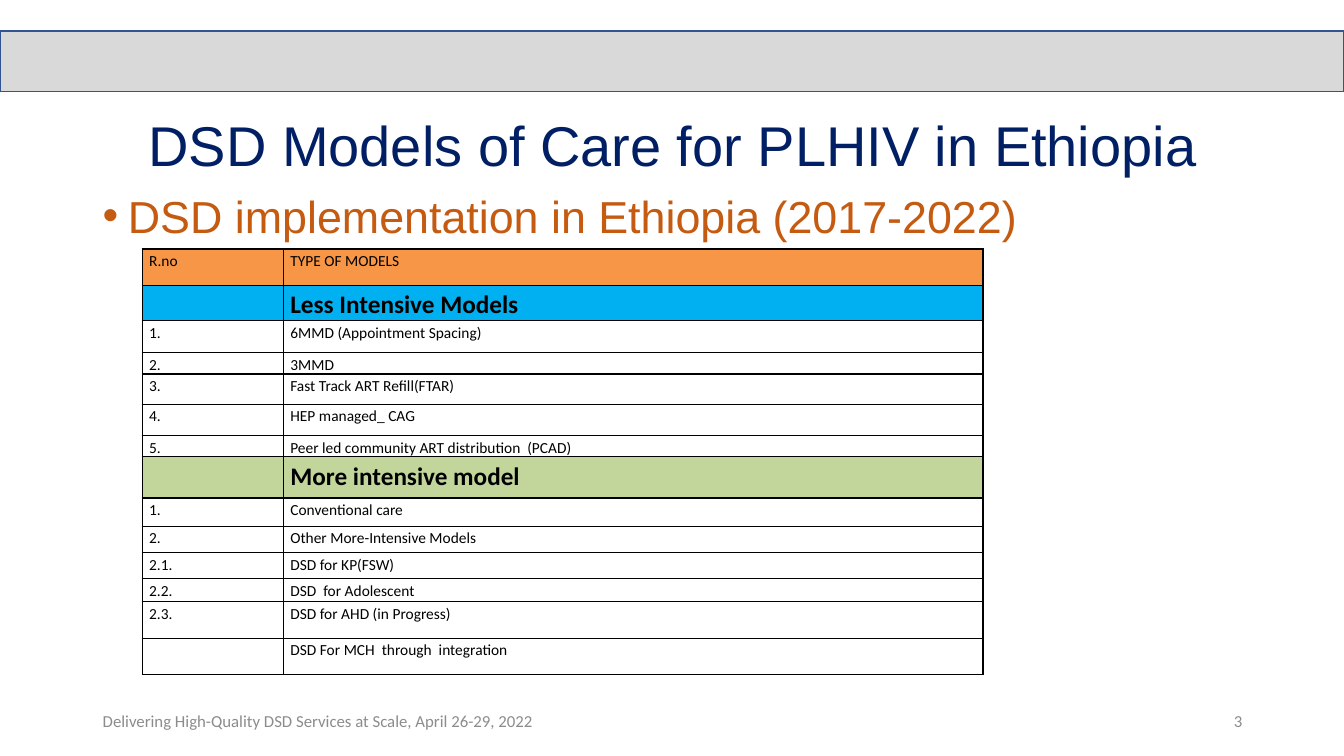
from typing import NamedTuple

import pptx
import pptx.dml.color
import pptx.enum.shapes
import pptx.enum.text
import pptx.oxml
import pptx.oxml.ns
import pptx.util
from lxml import etree

Inches = pptx.util.Inches
Pt = pptx.util.Pt
qn = pptx.oxml.ns.qn
ALIGN = pptx.enum.text.PP_ALIGN
ANCHOR = pptx.enum.text.MSO_ANCHOR

COLORS = {
    "band": "D9D9D9", "band_line": "325491", "title": "001F64", "bullet": "C55A11",
    "footer": "8C8C8C", "text": "000000", "header": "F79646", "less": "00B0F0", "more": "C2D69B",
}


class Row(NamedTuple):
    height: float
    number: str
    model: str
    fill: str = ""
    size: int = 11
    bold: bool = False


ROWS = [
    Row(0.36, "R.no", "TYPE OF MODELS", "header"),
    Row(0.35, "", "Less Intensive Models", "less", 18, True),
    Row(0.32, "1.", "6MMD (Appointment Spacing)"),
    Row(0.21, "2.", "3MMD"),
    Row(0.3, "3.", "Fast Track ART Refill(FTAR)"),
    Row(0.31, "4.", "HEP managed_ CAG"),
    Row(0.21, "5.", "Peer led community ART distribution  (PCAD)"),
    Row(0.41, "", "More intensive model", "more", 18, True),
    Row(0.28, "1.", "Conventional care"),
    Row(0.26, "2.", "Other More-Intensive Models"),
    Row(0.26, "2.1.", "DSD for KP(FSW)"),
    Row(0.23, "2.2.", "DSD  for Adolescent"),
    Row(0.36, "2.3.", "DSD for AHD (in Progress)"),
    Row(0.36, "", "DSD For MCH  through  integration"),
]
COLUMN_WIDTHS = [1.4, 6.94]


def rgb(name: str) -> pptx.dml.color.RGBColor:
    return pptx.dml.color.RGBColor.from_string(COLORS[name])


def write(tf, text: str, *, size: float, color: str = "text", font: str = "Calibri",
          bold: bool = False, align=ALIGN.LEFT, spacing: float = 1.0, bullet: str = "") -> None:
    """Put one formatted paragraph in a text frame."""
    p = tf.paragraphs[0]
    p.alignment = align
    p.line_spacing = spacing
    if bullet:
        p_pr = p._p.get_or_add_pPr()
        p_pr.set("marL", str(Inches(0.25)))
        p_pr.set("indent", str(-Inches(0.25)))
        etree.SubElement(p_pr, qn("a:buFont"), typeface="Arial")
        etree.SubElement(p_pr, qn("a:buChar"), char=bullet)
    if not text:
        etree.SubElement(p._p, qn("a:endParaRPr"), sz=str(size * 100))
        return
    r = p.add_run()
    r.text = text
    r.font.size = Pt(size)
    r.font.name = font
    r.font.bold = bold
    r.font.color.rgb = rgb(color)


def add_text(s, text: str, left: float, top: float, width: float, height: float,
             anchor=ANCHOR.MIDDLE, **text_format) -> None:
    tf = s.shapes.add_textbox(Inches(left), Inches(top), Inches(width), Inches(height)).text_frame
    tf.word_wrap = True
    tf.vertical_anchor = anchor
    write(tf, text, **text_format)


def add_borders(cell) -> None:
    tc_pr = cell._tc.get_or_add_tcPr()
    for i, side in enumerate(("lnL", "lnR", "lnT", "lnB")):
        ln = etree.Element(qn(f"a:{side}"), w=str(Pt(1)))
        fill = etree.SubElement(ln, qn("a:solidFill"))
        etree.SubElement(fill, qn("a:srgbClr"), val=COLORS["text"])
        tc_pr.insert(i, ln)


def add_models_table(s, left: float, top: float) -> None:
    height = sum(row.height for row in ROWS)
    table = s.shapes.add_table(len(ROWS), len(COLUMN_WIDTHS), Inches(left), Inches(top),
                               Inches(sum(COLUMN_WIDTHS)), Inches(height)).table
    table.first_row = False
    table.horz_banding = False
    for column, width in zip(table.columns, COLUMN_WIDTHS):
        column.width = Inches(width)
    for i, row in enumerate(ROWS):
        table.rows[i].height = Inches(row.height)
        for j, text in enumerate((row.number, row.model)):
            cell = table.cell(i, j)
            cell.margin_left = cell.margin_right = Inches(0.07)
            cell.margin_top = cell.margin_bottom = 0
            if row.fill:
                cell.fill.solid()
                cell.fill.fore_color.rgb = rgb(row.fill)
            else:
                cell.fill.background()
            write(cell.text_frame, text, size=row.size, bold=row.bold, spacing=1.15)
            add_borders(cell)


def main() -> None:
    prs = pptx.Presentation()
    prs.slide_width = Inches(13.33)
    prs.slide_height = Inches(7.5)
    s = prs.slides.add_slide(prs.slide_layouts[6])

    # Grey band across the top
    sp = s.shapes.add_shape(pptx.enum.shapes.MSO_SHAPE.RECTANGLE,
                            0, Inches(0.31), prs.slide_width, Inches(0.6))
    sp.shadow.inherit = False
    sp.fill.solid()
    sp.fill.fore_color.rgb = rgb("band")
    sp.line.color.rgb = rgb("band_line")
    sp.line.width = Pt(1)

    # Footer and slide number
    add_text(s, "Delivering High-Quality DSD Services at Scale, April 26-29, 2022",
             0.92, 6.95, 5.21, 0.4, size=12, color="footer")
    add_text(s, "3", 9.42, 6.95, 3, 0.4, size=12, color="footer", align=ALIGN.RIGHT)

    # Title and bullet
    add_text(s, "DSD Models of Care for PLHIV in Ethiopia", 0.92, 1.06, 11.5, 0.83,
             size=40, color="title", font="Arial", align=ALIGN.CENTER, spacing=0.9)
    add_text(s, "DSD implementation in Ethiopia (2017-2022)", 0.92, 1.82, 11.5, 4.66,
             anchor=ANCHOR.TOP, size=32, color="bullet", font="Arial", bullet="•")

    # Table of care models
    add_models_table(s, 1.41, 2.47)

    prs.save("out.pptx")


if __name__ == "__main__":
    main()
